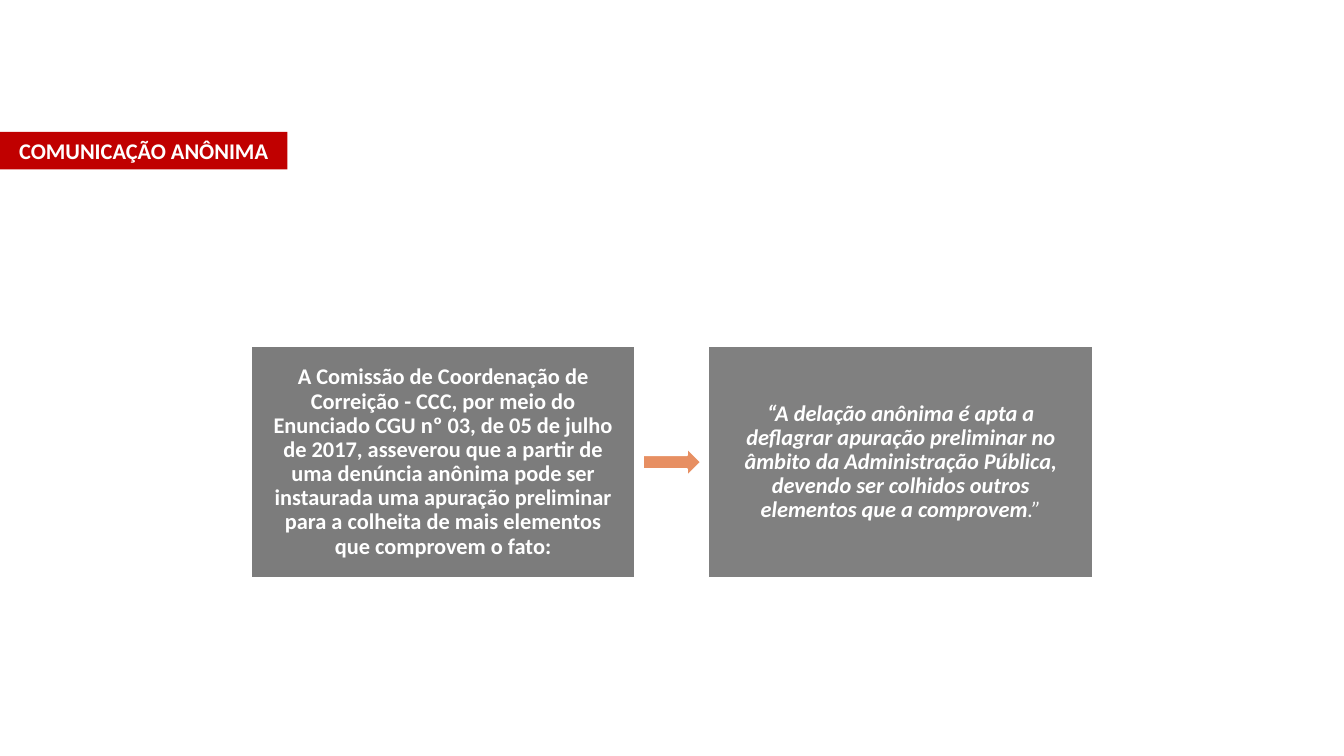
"""Build the slide on anonymous reports: a heading label and two statements joined by an arrow."""
from pptx import Presentation
from pptx.dml.color import RGBColor
from pptx.enum import shapes, text
from pptx.util import Inches, Pt

WHITE = RGBColor(0xFF, 0xFF, 0xFF)
RED = RGBColor(0xC0, 0x00, 0x00)
ORANGE = RGBColor(0xE7, 0x8F, 0x62)
DARK_GRAY = RGBColor(0x7C, 0x7C, 0x7C)
GRAY = RGBColor(0x80, 0x80, 0x80)

prs = Presentation()
prs.slide_width, prs.slide_height = Inches(13.33), Inches(7.5)
slide = prs.slides.add_slide(prs.slide_layouts[6])


def add_block(kind, bounds, color, outlined=True):
    block = slide.shapes.add_shape(kind, *map(Inches, bounds))
    block.shadow.inherit = False
    block.fill.solid()
    block.fill.fore_color.rgb = color
    if outlined:
        block.line.color.rgb = WHITE
        block.line.width = Pt(1)
    else:
        block.line.fill.background()
    return block


def write(block, runs, anchor):
    frame = block.text_frame
    frame.word_wrap = True
    frame.vertical_anchor = anchor
    paragraph = frame.paragraphs[0]
    paragraph.alignment = text.PP_ALIGN.CENTER
    for words, style in runs:
        run = paragraph.add_run()
        run.text = words
        run.font.color.rgb = WHITE
        for key, value in {"name": "Calibri", "size": Pt(16), "bold": True, **style}.items():
            setattr(run.font, key, value)
    return frame


statements = [
    (2.49, DARK_GRAY, [
        ("A Comissão de Coordenação de Correição - CCC, por meio do Enunciado CGU nº 03, "
         "de 05 de julho de 2017, asseverou que a partir de uma denúncia anônima pode ser "
         "instaurada uma apuração preliminar para a colheita de mais elementos que "
         "comprovem o fato:", {}),
    ]),
    (7.03, GRAY, [
        ("“A delação anônima é apta a deflagrar apuração preliminar no âmbito da "
         "Administração Pública, devendo ser colhidos outros elementos que a comprovem",
         {"italic": True}),
        (".”", {"italic": True, "bold": False}),
    ]),
]
for left, color, runs in statements:
    statement = add_block(shapes.MSO_SHAPE.RECTANGLE, (left, 3.44, 3.81, 2.29), color)
    frame = write(statement, runs, text.MSO_ANCHOR.MIDDLE)
    for side in ("left", "top", "right", "bottom"):
        setattr(frame, f"margin_{side}", Inches(0.17))
    frame.paragraphs[0].line_spacing = 0.9

add_block(shapes.MSO_SHAPE.RIGHT_ARROW, (6.38, 4.45, 0.57, 0.27), ORANGE)

heading = add_block(shapes.MSO_SHAPE.RECTANGLE, (0, 1.31, 2.85, 0.37), RED, outlined=False)
write(heading, [("COMUNICAÇÃO ANÔNIMA", {})], text.MSO_ANCHOR.BOTTOM)

prs.save("out.pptx")
